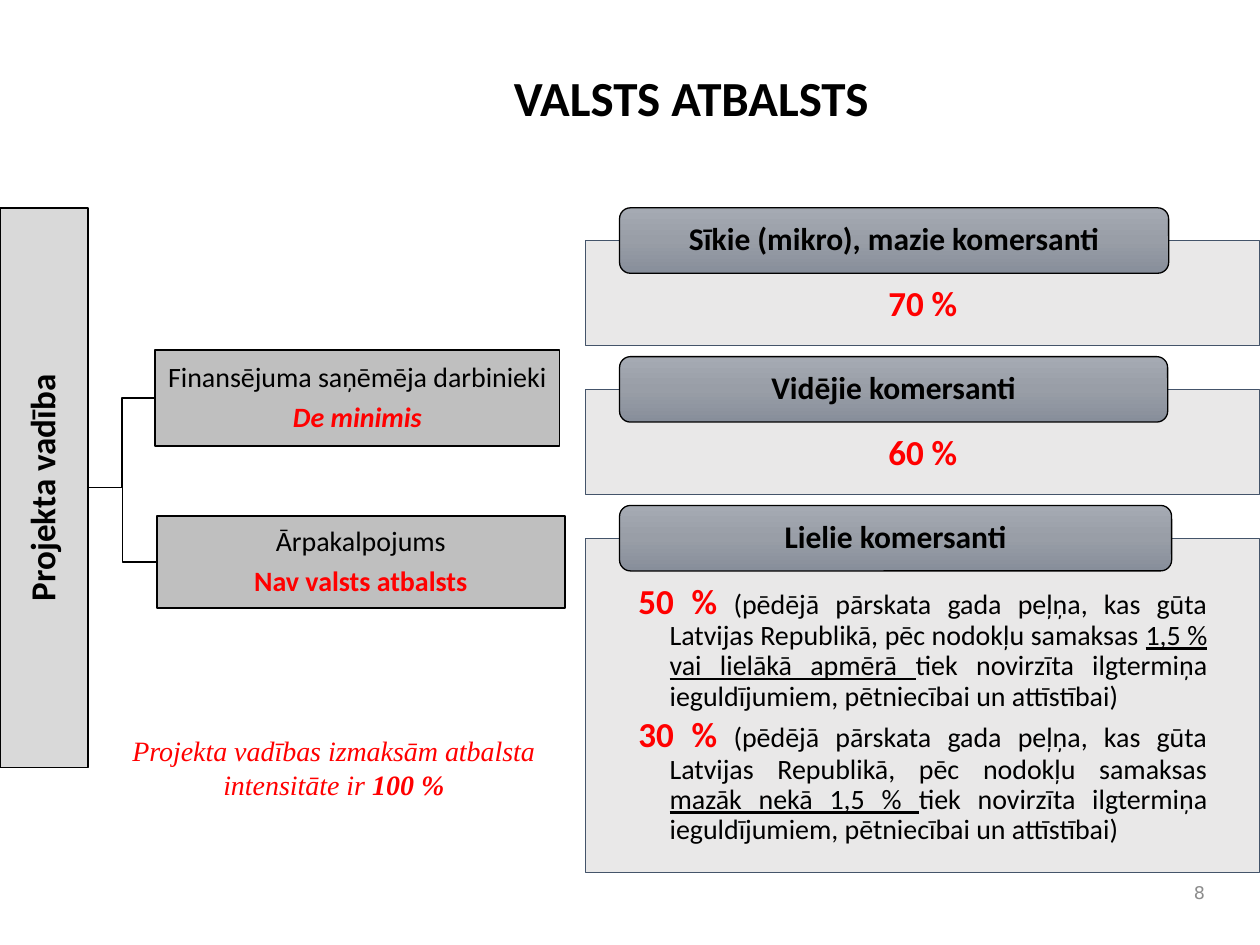
from copy import deepcopy

from lxml.etree import SubElement
from pptx import Presentation
from pptx.dml.color import RGBColor
from pptx.enum.shapes import MSO_CONNECTOR as Connector, MSO_SHAPE as Shape
from pptx.enum.text import MSO_ANCHOR as Anchor, MSO_AUTO_SIZE as AutoSize, PP_ALIGN as Align
from pptx.oxml.ns import qn
from pptx.util import Cm, Pt

BLACK = RGBColor(0x00, 0x00, 0x00)
RED = RGBColor(0xFF, 0x00, 0x00)
MUTED = RGBColor(0x8C, 0x8C, 0x8C)
LIGHT_GRAY = RGBColor(0xD9, 0xD9, 0xD9)
MID_GRAY = RGBColor(0xBF, 0xBF, 0xBF)
PANEL_GRAY = RGBColor(0xE7, 0xE6, 0xE6)
PANEL_LINE = RGBColor(0x44, 0x54, 0x6A)
HEADER_COLORS = (RGBColor(0xA5, 0xAA, 0xB3), RGBColor(0x99, 0x9E, 0xA7), RGBColor(0x87, 0x8E, 0x9A))

PROFIT = " (pēdējā pārskata gada peļņa, kas gūta Latvijas Republikā, pēc nodokļu samaksas "
INVESTED = "tiek novirzīta ilgtermiņa ieguldījumiem, pētniecībai un attīstībai)"


def styled(text, size, color=BLACK, name="Calibri", bold=False, italic=False, underline=False):
    return text, size, color, name, bold, italic, underline


def rate(text):
    return styled(text, 20, RED, bold=True)


def condition(percent, share):
    return [rate(percent), styled(PROFIT, 16), styled(share, 16, underline=True), styled(INVESTED, 16)]


PANELS = [
    ("Sīkie (mikro), mazie komersanti", 11.07, 2.11, Align.CENTER, [[rate("70 %")]]),
    ("Vidējie komersanti", 11.05, 2.11, Align.CENTER, [[rate("60 %")]]),
    ("Lielie komersanti", 11.13, 6.73, Align.JUSTIFY,
     [condition("50 %", "1,5 % vai lielākā apmērā "), condition("30 %", "mazāk nekā 1,5 % ")]),
]
BRANCHES = [
    (3.13, 7.06, 8.15, 1.93, [[styled("Finansējuma saņēmēja darbinieki", 16)],
                              [styled("De minimis", 16, RED, bold=True, italic=True)]]),
    (3.16, 10.41, 8.23, 1.85, [[styled("Ārpakalpojums", 16)],
                               [styled("Nav valsts atbalsts", 16, RED, bold=True)]]),
]


def write_text(shape, paragraphs, insets=(0.25, 0.13, 0.25, 0.13), anchor=Anchor.MIDDLE,
               align=Align.CENTER, spacing=0.9, after=0, wrap=True):
    frame = shape.text_frame
    frame.word_wrap = wrap
    frame.vertical_anchor = anchor
    frame.margin_left, frame.margin_top, frame.margin_right, frame.margin_bottom = map(Cm, insets)
    for index, runs in enumerate(paragraphs):
        paragraph = frame.paragraphs[0] if index == 0 else frame.add_paragraph()
        paragraph.alignment = align
        paragraph.line_spacing = spacing
        paragraph.space_after = Pt(after)
        for text, size, color, name, bold, italic, underline in runs:
            run = paragraph.add_run()
            run.text = text
            font = run.font
            font.size, font.name = Pt(size), name
            font.bold, font.italic, font.underline = bold, italic, underline
            font.color.rgb = color
    return frame


def add_box(slide, kind, left, top, width, height, fill, line, line_width):
    shape = slide.shapes.add_shape(kind, Cm(left), Cm(top), Cm(width), Cm(height))
    shape.shadow.inherit = False
    if fill is not None:
        shape.fill.solid()
        shape.fill.fore_color.rgb = fill
    shape.line.color.rgb = line
    shape.line.width = Pt(line_width)
    return shape


def add_label(slide, left, top, width, height, paragraphs, **options):
    box = slide.shapes.add_textbox(Cm(left), Cm(top), Cm(width), Cm(height))
    return write_text(box, paragraphs, **options)


def shade_header(header):
    header.fill.gradient()
    header.fill.gradient_angle = 270
    stop_list = header._element.spPr.find(qn("a:gradFill")).find(qn("a:gsLst"))
    stop_list.insert(1, deepcopy(stop_list[0]))
    for stop, position, color in zip(header.fill.gradient_stops, (0, 0.5, 1), HEADER_COLORS):
        stop.position = position
        stop.color.rgb = color


def add_panel(slide, left, top, width, height, title, title_width, align, paragraphs):
    header_height = 1.32
    body = add_box(slide, Shape.RECTANGLE, left, top + header_height / 2, width, height,
                   PANEL_GRAY, PANEL_LINE, 0.5)
    color = body._element.spPr.find(qn("a:solidFill"))[0]
    SubElement(color, qn("a:alpha")).set("val", "90000")
    frame = write_text(body, paragraphs, (1.06, 0.92, 1.06, 0.4), Anchor.TOP, align, after=3)
    for paragraph in frame.paragraphs:
        paragraph.level = 1
        properties = paragraph._p.get_or_add_pPr()
        properties.set("marL", str(Cm(0.63)))
        properties.set("indent", str(-Cm(0.63)))

    header = add_box(slide, Shape.ROUNDED_RECTANGLE, left + 0.68, top, title_width, header_height,
                     None, BLACK, 0.75)
    shade_header(header)
    write_text(header, [[styled(title, 18, bold=True)]], (0.4, 0, 0.4, 0))


def add_panels(slide, left, top, width):
    for title, title_width, height, align, paragraphs in PANELS:
        add_panel(slide, left, top, width, height, title, title_width, align, paragraphs)
        top += height + 0.89


def add_management_tree(slide, left, top, width, height):
    middle = top + height / 2
    insets = (0.03,) * 4
    for box_left, box_top, box_width, box_height, paragraphs in BRANCHES:
        connector = slide.shapes.add_connector(
            Connector.ELBOW, Cm(left + width), Cm(middle),
            Cm(left + box_left), Cm(box_top + box_height / 2))
        connector.line.color.rgb = BLACK
        connector.line.width = Pt(1)
        SubElement(connector._element.spPr, qn("a:effectLst"))
        branch = add_box(slide, Shape.RECTANGLE, left + box_left, box_top, box_width, box_height,
                         MID_GRAY, BLACK, 1)
        write_text(branch, paragraphs, insets, after=5.5)

    root = add_box(slide, Shape.RECTANGLE, left + (width - height) / 2, middle - width / 2,
                   height, width, LIGHT_GRAY, BLACK, 1)
    root.rotation = 270
    write_text(root, [[styled("Projekta vadība", 20, bold=True)]], insets)


def main():
    presentation = Presentation()
    presentation.slide_width, presentation.slide_height = Cm(25.4), Cm(19.05)
    slide = presentation.slides.add_slide(presentation.slide_layouts[6])

    add_label(slide, 23.7, 17.58, 0.84, 0.84, [[styled("8", 10, MUTED, "DejaVu Sans")]],
              align=Align.RIGHT, spacing=1, wrap=False)
    add_management_tree(slide, 0, 4.19, 1.78, 11.28)
    add_panels(slide, 11.81, 4.19, 13.59)
    intensity = [styled("Projekta vadības izmaksām atbalsta intensitāte ir ", 16, RED,
                        "Times New Roman", italic=True),
                 styled("100 %", 16, RED, "Times New Roman", bold=True, italic=True)]
    note = add_label(slide, 1.65, 14.66, 10.16, 1.63, [intensity], anchor=Anchor.TOP, spacing=1)
    note.auto_size = AutoSize.SHAPE_TO_FIT_TEXT
    title = add_label(slide, 10.06, 1.37, 7.75, 1.35, [[styled("VALSTS ATBALSTS", 28, bold=True)]],
                      anchor=Anchor.TOP, wrap=False)
    title.auto_size = AutoSize.SHAPE_TO_FIT_TEXT

    presentation.save("out.pptx")


if __name__ == "__main__":
    main()
